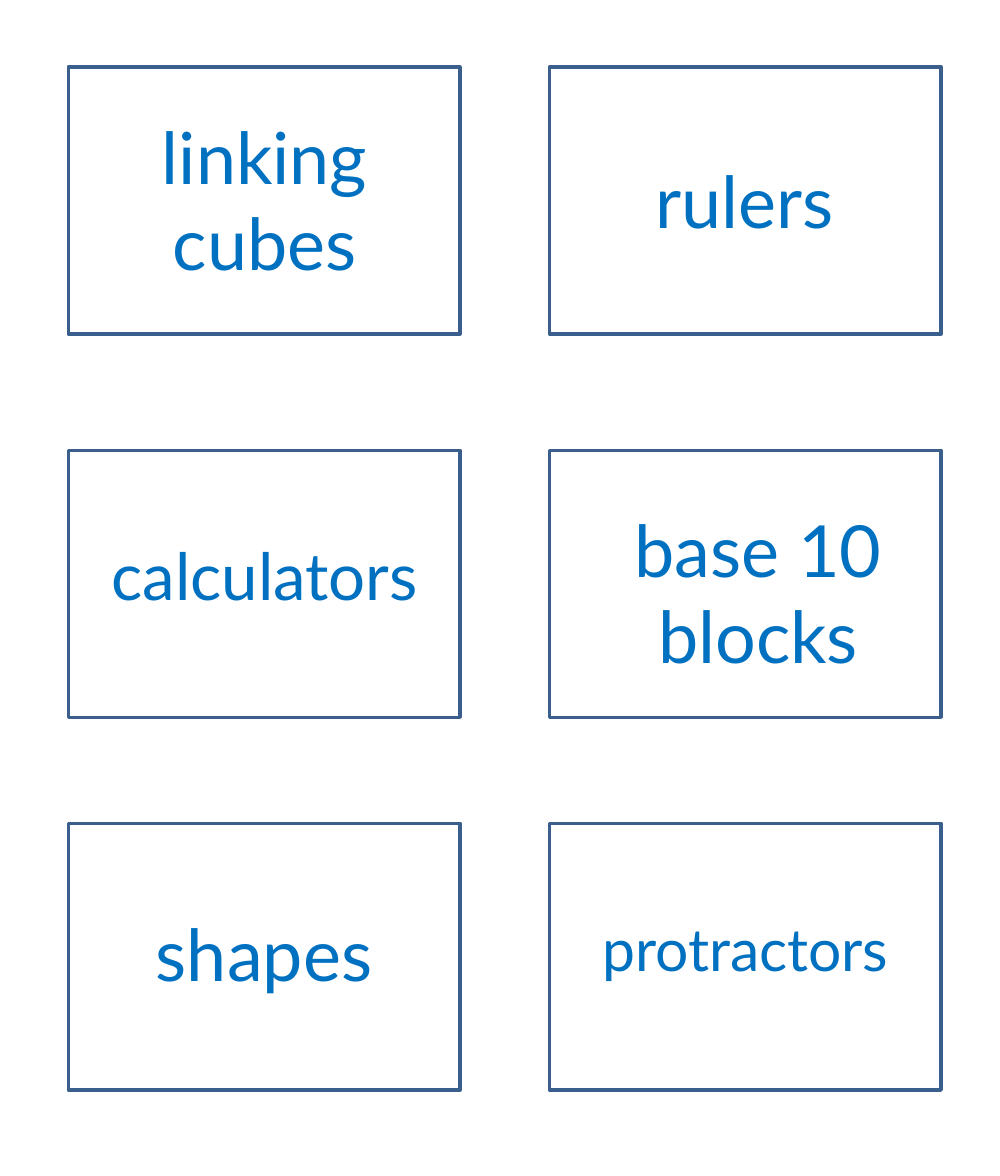
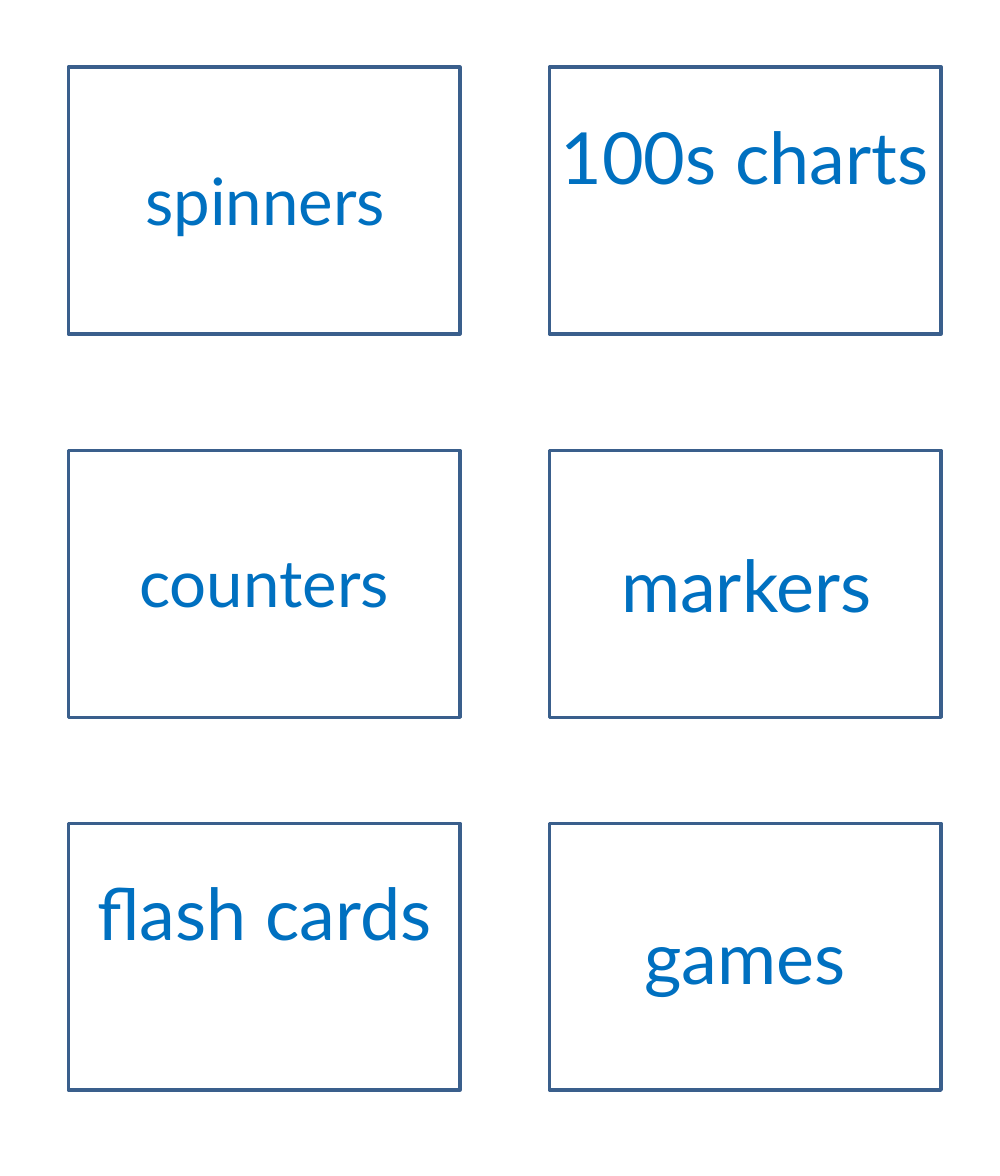
"""Build two sheets of word cards for math tools."""
import pptx
import pptx.util
import pptx.dml.color
import pptx.enum.shapes
import pptx.enum.text

PX = 9144
HUES = {"card": "FFFFFF", "edge": "3A5F8C", "word": "0070C0"}
COLS = (58, 467)
ROWS = (57, 383, 700)
CARD = (333, 227)
FONT = {"name": "Lato"}
FRAME = {"auto_size": pptx.enum.text.MSO_AUTO_SIZE.SHAPE_TO_FIT_TEXT,
         "vertical_anchor": pptx.enum.text.MSO_ANCHOR.TOP}
SHEETS = (
    (
        ("linking\ncubes", (118, 91, 214, 158), 44, False),
        ("rulers", (524, 128, 218, 84), 44, False),
        ("calculators", (47, 450, 356, 77), 40, False),
        ("base 10\nblocks", (505, 425, 279, 158), 44, False),
        ("shapes", (102, 769, 245, 84), 44, False),
        ("protractors", (466, 771, 335, 71), 36, False),
    ),
    (
        ("spinners", (89, 131, 273, 77), 40, False),
        ("100s charts", (463, 91, 340, 158), 44, True),
        ("counters", (82, 456, 285, 77), 40, False),
        ("markers", (485, 455, 299, 84), 44, False),
        ("flash cards", (54, 734, 342, 158), 44, True),
        ("games", (475, 771, 317, 84), 44, True),
    ),
)


def scale(*sides):
    """Turn px lengths into EMU."""
    return [pptx.util.Emu(side * PX) for side in sides]


def tint(name):
    """Return the named colour."""
    return pptx.dml.color.RGBColor.from_string(HUES[name])


def style(item, values):
    """Set each attribute in a dict of format values."""
    for key, value in values.items():
        setattr(item, key, value)


def add_card(slide, left, top):
    """Draw one outlined card."""
    kind = pptx.enum.shapes.MSO_SHAPE.RECTANGLE
    card = slide.shapes.add_shape(kind, *scale(left, top, *CARD))
    card.shadow.inherit = False
    card.fill.solid()
    card.fill.fore_color.rgb = tint("card")
    card.line.color.rgb = tint("edge")
    card.line.width = pptx.util.Pt(2)


def add_word(slide, text, place, size, wrap):
    """Write the centred word of a card."""
    frame = slide.shapes.add_textbox(*scale(*place)).text_frame
    frame.text = text
    style(frame, {**FRAME, "word_wrap": wrap})
    for line in frame.paragraphs:
        line.alignment = pptx.enum.text.PP_ALIGN.CENTER
        for run in line.runs:
            style(run.font, {**FONT, "size": pptx.util.Pt(size)})
            run.font.color.rgb = tint("word")


def add_sheet(deck, words):
    """Add a slide with a grid of cards and their words."""
    slide = deck.slides.add_slide(deck.slide_layouts[6])
    spots = [(left, top) for top in ROWS for left in COLS]
    for spot, word in zip(spots, words):
        add_card(slide, *spot)
        add_word(slide, *word)


def main():
    """Build and save the deck."""
    deck = pptx.Presentation()
    deck.slide_width, deck.slide_height = scale(850, 1000)
    for words in SHEETS:
        add_sheet(deck, words)
    deck.save("out.pptx")


if __name__ == "__main__":
    main()
